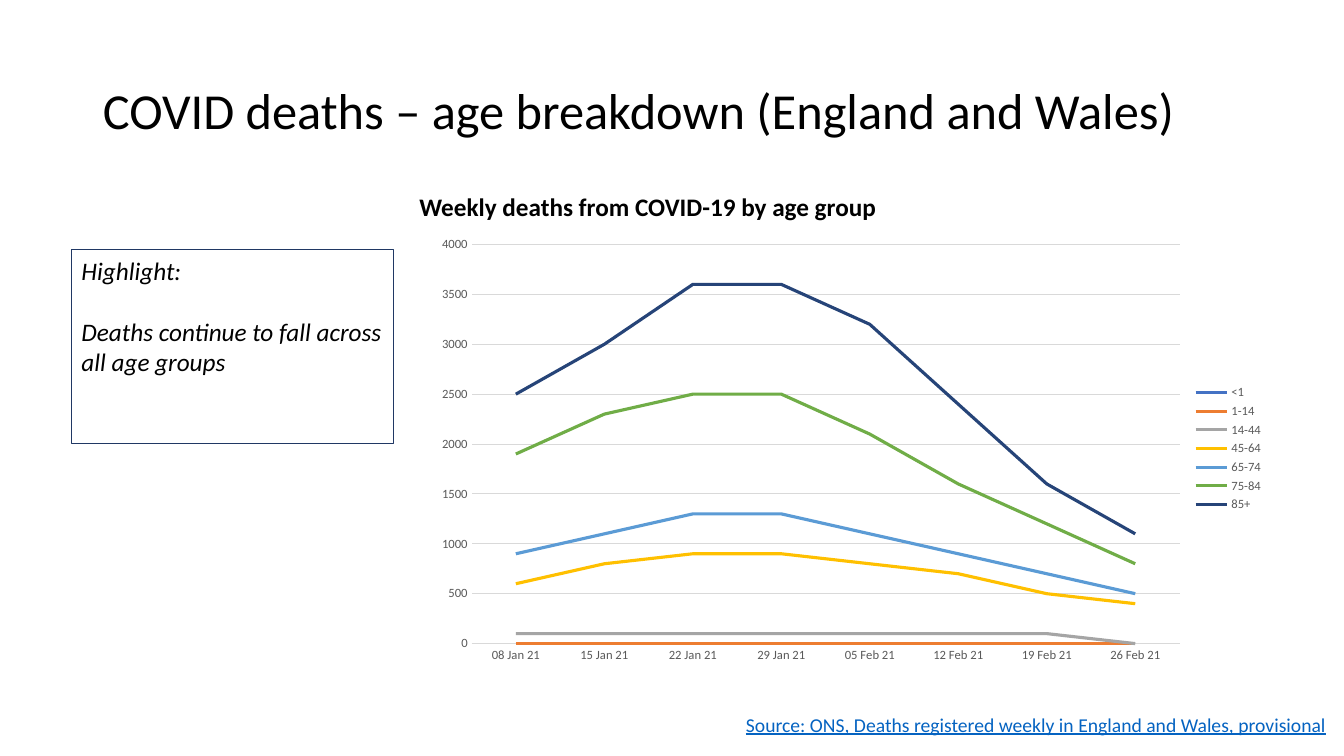
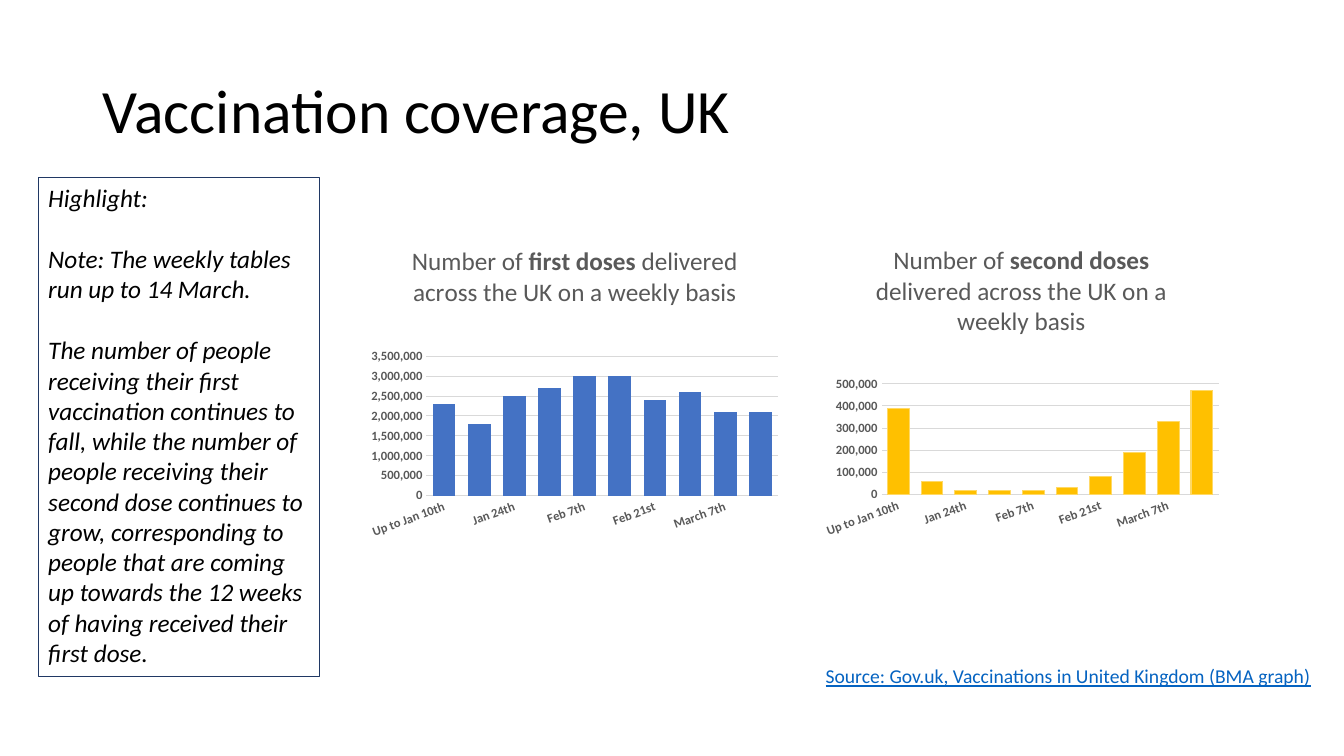
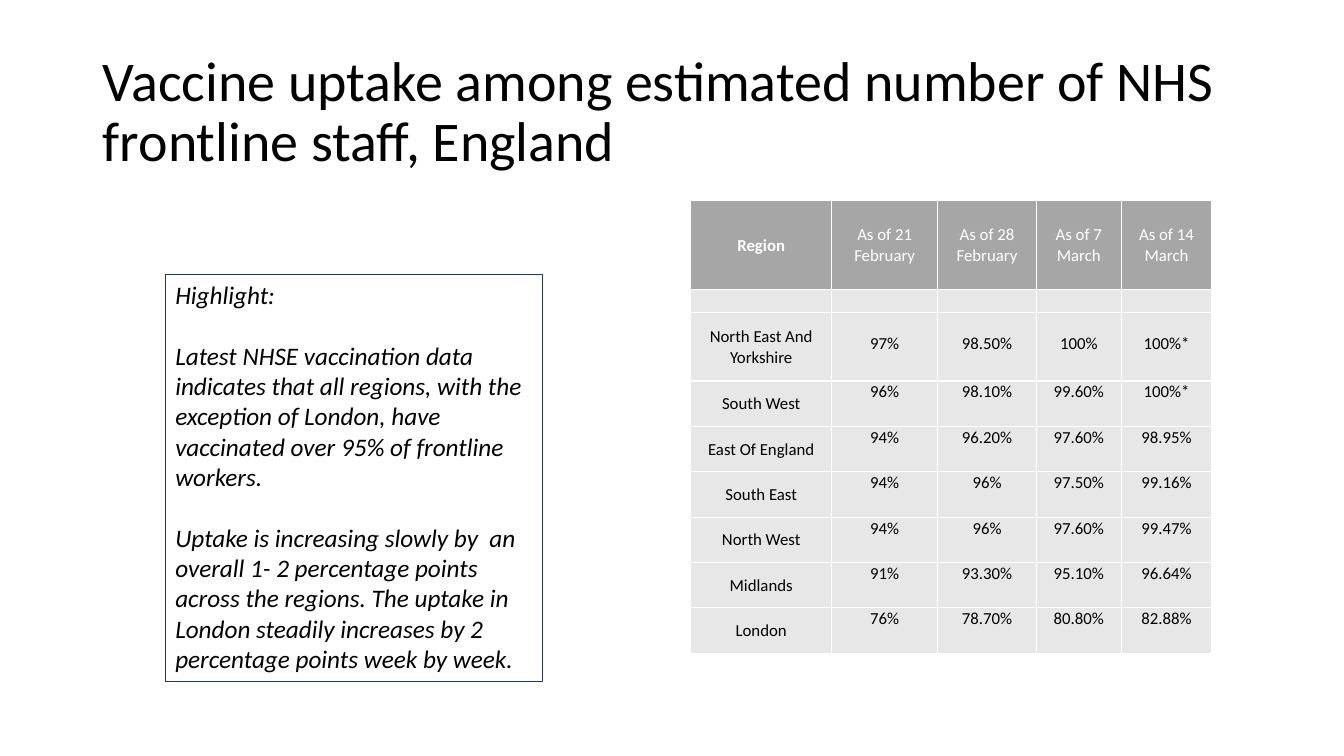
from pptx import Presentation
from pptx.chart.data import CategoryChartData
from pptx.dml.color import RGBColor
from pptx.enum.chart import XL_CHART_TYPE, XL_LEGEND_POSITION, XL_MARKER_STYLE, XL_TICK_MARK
from pptx.enum.shapes import MSO_SHAPE
from pptx.enum.text import MSO_ANCHOR, MSO_AUTO_SIZE, PP_ALIGN
from pptx.oxml import parse_xml
from pptx.oxml.ns import nsdecls
from pptx.util import Inches, Pt

FONT = "Calibri"
BLACK, WHITE, NAVY, LINK = "000000", "FFFFFF", "203864", "0563C1"
AXIS_TEXT, GRID, HEAD_FILL, BODY_FILL = "595959", "D9D9D9", "A6A6A6", "E7E7E7"
TITLE_AT = (0.92, 0.4, 11.5, 1.45)

DEATHS = {
    "title": "COVID deaths – age breakdown (England and Wales)",
    "highlight": ["Highlight:", "Deaths continue to fall across all age groups"],
    "source": "Source: ONS, Deaths registered weekly in England and Wales, provisional",
    "heading": "Weekly deaths from COVID-19 by age group",
    "weeks": ["08 Jan 21", "15 Jan 21", "22 Jan 21", "29 Jan 21",
              "05 Feb 21", "12 Feb 21", "19 Feb 21", "26 Feb 21"],
    "ages": [
        ("<1", "4472C4", [0] * 8),
        ("1-14", "ED7D31", [0] * 8),
        ("14-44", "A5A5A5", [100] * 7 + [0]),
        ("45-64", "FFC000", [600, 800, 900, 900, 800, 700, 500, 400]),
        ("65-74", "5B9BD5", [900, 1100, 1300, 1300, 1100, 900, 700, 500]),
        ("75-84", "70AD47", [1900, 2300, 2500, 2500, 2100, 1600, 1200, 800]),
        ("85+", "264478", [2500, 3000, 3600, 3600, 3200, 2400, 1600, 1100]),
    ],
}

COVERAGE = {
    "title": "Vaccination coverage, UK",
    "highlight": [
        "Highlight:",
        "Note: The weekly tables run up to 14 March.",
        "The number of people receiving their first vaccination continues to fall, while the "
        "number of people receiving their second dose continues to grow, corresponding to people "
        "that are coming up towards the 12 weeks of having received their first dose.",
    ],
    "source": "Source: Gov.uk, Vaccinations in United Kingdom (BMA graph)",
    "weeks": ["Up to Jan 10th", "Jan 17th", "Jan 24th", "Jan 31st", "Feb 7th",
              "Feb 14th", "Feb 21st", "Feb 28th", "March 7th", "March 14th"],
    "doses": [
        {"name": "first doses", "at": (3.6, 2.28, 4.2, 3.14), "plot": (0.15, 0.4, 0.83, 0.44),
         "fill": "4472C4", "line": None, "overlap": 9, "top": 3500000, "step": 500000,
         "values": [2300000, 1800000, 2500000, 2700000, 3000000,
                    3000000, 2400000, 2600000, 2100000, 2100000]},
        {"name": "second doses", "at": (8.09, 2.27, 4.08, 3.14), "plot": (0.16, 0.49, 0.82, 0.35),
         "fill": "FFC000", "line": "FFD966", "overlap": -27, "top": 500000, "step": 100000,
         "values": [390000, 60000, 20000, 20000, 20000,
                    30000, 80000, 190000, 330000, 470000]},
    ],
}

UPTAKE = {
    "title": "Vaccine uptake among estimated number of NHS frontline staff, England",
    "highlight": [
        "Highlight:",
        "Latest NHSE vaccination data indicates that all regions, with the exception of London, "
        "have vaccinated over 95% of frontline workers.",
        "Uptake is increasing slowly by  an overall 1- 2 percentage points across the regions. "
        "The uptake in London steadily increases by 2 percentage points week by week.",
    ],
    "columns": [1.4, 1.05, 0.98, 0.84, 0.9],
    "heights": [0.88, 0.23, 0.68] + [0.45] * 6,
    "regions": [
        ("Region", "As of 21 February", "As of 28 February", "As of 7 March", "As of 14 March"),
        ("",) * 5,
        ("North East And Yorkshire", "97%", "98.50%", "100%", "100%*"),
        ("South West", "96%", "98.10%", "99.60%", "100%*"),
        ("East Of England", "94%", "96.20%", "97.60%", "98.95%"),
        ("South East", "94%", "96%", "97.50%", "99.16%"),
        ("North West", "94%", "96%", "97.60%", "99.47%"),
        ("Midlands", "91%", "93.30%", "95.10%", "96.64%"),
        ("London", "76%", "78.70%", "80.80%", "82.88%"),
    ],
}


def rgb(value):
    return RGBColor.from_string(value)


def inches(lengths):
    return [Inches(length) for length in lengths]


def style(font, size, color, bold=False, italic=False, underline=False):
    font.name, font.size = FONT, Pt(size)
    font.bold, font.italic, font.underline = bold, italic, underline
    font.color.rgb = rgb(color)


def start_slide(deck, title, size):
    slide = deck.slides.add_slide(deck.slide_layouts[5])
    heading = slide.shapes.title
    heading.left, heading.top, heading.width, heading.height = inches(TITLE_AT)
    frame = heading.text_frame
    frame.text = title
    frame.auto_size = MSO_AUTO_SIZE.NONE
    frame.vertical_anchor = MSO_ANCHOR.MIDDLE
    paragraph = frame.paragraphs[0]
    paragraph.alignment, paragraph.line_spacing = PP_ALIGN.LEFT, 0.9
    style(paragraph.font, size, BLACK)
    return slide


def add_highlight(slide, at, lines):
    box = slide.shapes.add_shape(MSO_SHAPE.RECTANGLE, *inches(at))
    box.shadow.inherit = False
    box.fill.background()
    box.line.color.rgb, box.line.width = rgb(NAVY), Pt(0.75)
    frame = box.text_frame
    frame.word_wrap = True
    frame.vertical_anchor = MSO_ANCHOR.TOP
    for index, line in enumerate(lines):
        paragraph = frame.add_paragraph() if index else frame.paragraphs[0]
        paragraph.text = line
        paragraph.alignment = PP_ALIGN.LEFT
        if index:
            paragraph.space_before = Pt(22)
        style(paragraph.font, 18, BLACK, italic=True)


def add_label(slide, at, text, size, color, wrap=True, **look):
    frame = slide.shapes.add_textbox(*inches(at)).text_frame
    frame.word_wrap = wrap
    frame.text = text
    style(frame.paragraphs[0].font, size, color, **look)


def place_plot(chart, shares):
    edges = "".join(f'<c:{tag} val="{share}"/>' for tag, share in zip("xywh", shares))
    layout = parse_xml(
        f'<c:layout {nsdecls("c")}><c:manualLayout><c:layoutTarget val="inner"/>'
        f'<c:xMode val="edge"/><c:yMode val="edge"/>{edges}</c:manualLayout></c:layout>')
    area = chart._chartSpace.chart.plotArea
    for old in area.findall(layout.tag):
        area.remove(old)
    area.insert(0, layout)


def add_trend(slide, kind, at, plot, weeks, series, top, step, number_format, bold=False):
    data = CategoryChartData(number_format=number_format)
    data.categories = weeks
    for name, values in series:
        data.add_series(name, values)
    chart = slide.shapes.add_chart(kind, *inches(at), data).chart
    style(chart.font, 10, BLACK)
    chart.has_title = chart.has_legend = False
    chart.plots[0].vary_by_categories = False
    for axis in (chart.category_axis, chart.value_axis):
        axis.major_tick_mark = axis.minor_tick_mark = XL_TICK_MARK.NONE
        style(axis.tick_labels.font, 9, AXIS_TEXT, bold)
    grid = chart.value_axis.major_gridlines.format.line
    for line in (chart.category_axis.format.line, grid):
        line.color.rgb, line.width = rgb(GRID), Pt(0.75)
    values = chart.value_axis
    values.format.line.fill.background()
    values.minimum_scale, values.maximum_scale, values.major_unit = 0, top, step
    values.tick_labels.number_format = number_format
    values.tick_labels.number_format_is_linked = False
    place_plot(chart, plot)
    return chart


def build_deaths(deck):
    slide = start_slide(deck, DEATHS["title"], 36)
    add_highlight(slide, (0.71, 2.48, 3.19, 1.92), DEATHS["highlight"])
    add_label(slide, (7.3, 7.02, 6.02, 0.34), DEATHS["source"], 14, LINK, wrap=False, underline=True)
    chart = add_trend(slide, XL_CHART_TYPE.LINE, (4.17, 2.25, 8.46, 4.4), (0.06, 0.04, 0.83, 0.9),
                      DEATHS["weeks"], [(age, counts) for age, _, counts in DEATHS["ages"]],
                      4000, 500, "General")
    for series, (_, color, _) in zip(chart.plots[0].series, DEATHS["ages"]):
        series.smooth = False
        series.marker.style = XL_MARKER_STYLE.NONE
        series.format.line.color.rgb, series.format.line.width = rgb(color), Pt(2.25)
    chart.has_legend = True
    chart.legend.position = XL_LEGEND_POSITION.RIGHT
    chart.legend.include_in_layout = False
    style(chart.legend.font, 9, AXIS_TEXT)
    add_label(slide, (4.06, 1.85, 8.68, 0.4), DEATHS["heading"], 18, BLACK, bold=True)


def build_coverage(deck):
    slide = start_slide(deck, COVERAGE["title"], 44)
    add_highlight(slide, (0.38, 1.76, 2.79, 4.95), COVERAGE["highlight"])
    add_label(slide, (8.09, 6.54, 5.14, 0.34), COVERAGE["source"], 14, LINK, underline=True)
    for dose in COVERAGE["doses"]:
        chart = add_trend(slide, XL_CHART_TYPE.COLUMN_CLUSTERED, dose["at"], dose["plot"],
                          COVERAGE["weeks"], [("Series 1", dose["values"])],
                          dose["top"], dose["step"], "#,##0", bold=True)
        plot = chart.plots[0]
        plot.gap_width, plot.overlap = 55, dose["overlap"]
        bars = plot.series[0].format
        bars.fill.solid()
        bars.fill.fore_color.rgb = rgb(dose["fill"])
        if dose["line"]:
            bars.line.color.rgb, bars.line.width = rgb(dose["line"]), Pt(0.75)
        chart.category_axis._element.txPr.bodyPr.set("rot", "-1200000")
        chart.has_title = True
        chart.chart_title.include_in_layout = False
        heading = chart.chart_title.text_frame.paragraphs[0]
        for text in ("Number of ", dose["name"], " delivered across the UK on a weekly basis"):
            run = heading.add_run()
            run.text = text
            style(run.font, 18, AXIS_TEXT, bold=text == dose["name"])


def add_borders(cell):
    properties = cell._tc.get_or_add_tcPr()
    for side in "LRTB":
        properties.append(parse_xml(
            f'<a:ln{side} {nsdecls("a")} w="{Pt(1)}"><a:solidFill>'
            f'<a:srgbClr val="{WHITE}"/></a:solidFill></a:ln{side}>'))


def build_uptake(deck):
    slide = start_slide(deck, UPTAKE["title"], 40)
    add_highlight(slide, (1.64, 2.72, 3.74, 4.04), UPTAKE["highlight"])
    widths, heights, regions = UPTAKE["columns"], UPTAKE["heights"], UPTAKE["regions"]
    table = slide.shapes.add_table(len(heights), len(widths),
                                   *inches((6.85, 1.99, sum(widths), sum(heights)))).table
    table.horz_banding = False
    for column, width in zip(table.columns, widths):
        column.width = Inches(width)
    for r, (row, height) in enumerate(zip(table.rows, heights)):
        row.height = Inches(height)
        for c, (cell, text) in enumerate(zip(row.cells, regions[r])):
            header = r == 0
            add_borders(cell)
            cell.fill.solid()
            cell.fill.fore_color.rgb = rgb(HEAD_FILL if header else BODY_FILL)
            cell.margin_left = cell.margin_right = Inches(0.01)
            cell.margin_top = Inches(0.21 if r == 2 and c else 0.01)
            cell.margin_bottom = 0
            cell.vertical_anchor = MSO_ANCHOR.MIDDLE if header or c == 0 else MSO_ANCHOR.TOP
            paragraph = cell.text_frame.paragraphs[0]
            paragraph.alignment = PP_ALIGN.CENTER
            style(paragraph.font, 12, WHITE if header else BLACK, bold=header and c == 0)
            if text:
                paragraph.add_run().text = text
            else:
                paragraph._p.append(parse_xml(f'<a:endParaRPr {nsdecls("a")} sz="1200"/>'))


def main():
    deck = Presentation()
    deck.slide_width, deck.slide_height = inches((13.33, 7.5))
    for build in (build_deaths, build_coverage, build_uptake):
        build(deck)
    deck.save("out.pptx")


if __name__ == "__main__":
    main()
